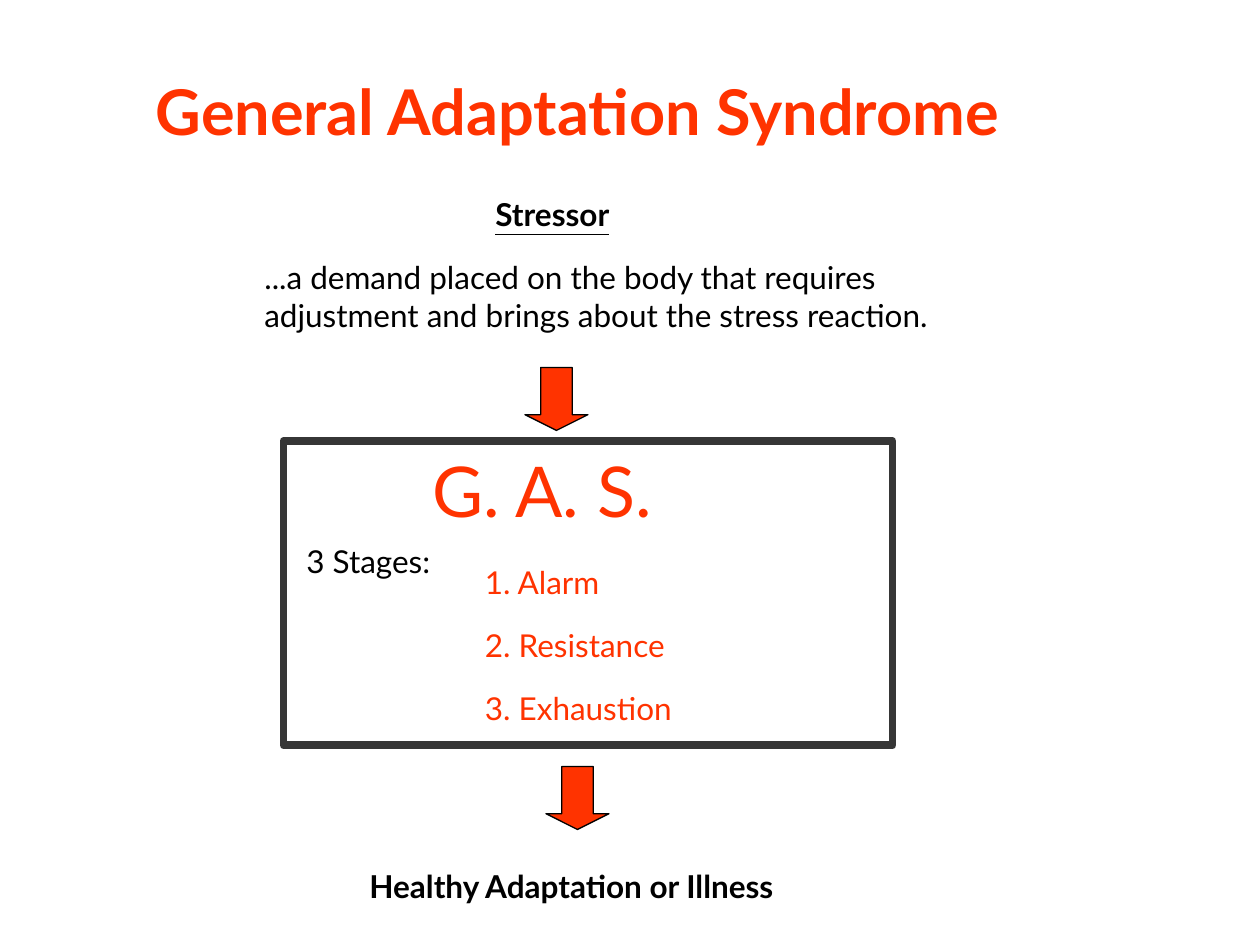
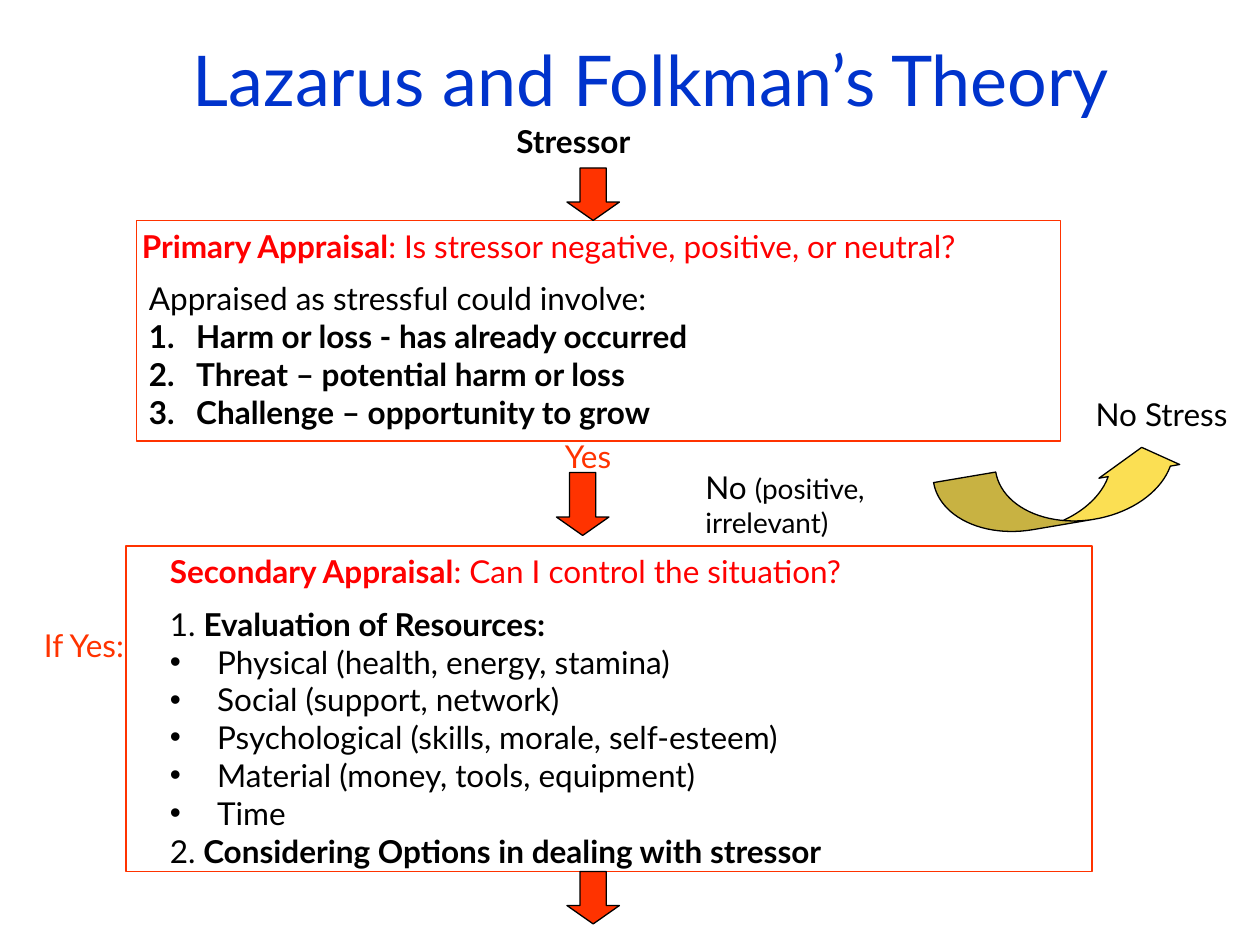
from lxml.etree import SubElement
from pptx import Presentation
from pptx.dml.color import RGBColor
from pptx.enum.shapes import MSO_SHAPE as Shape
from pptx.enum.text import MSO_ANCHOR as Anchor, PP_ALIGN as Align
from pptx.oxml.ns import qn
from pptx.util import Pt

FONT = "Lato"
COLORS = {"black": "000000", "orange": "FF3300", "red": "FF0000", "blue": "0033CC",
          "charcoal": "363636", "yellow": "FBDF53"}
BODY_SIZE = 18
TITLE_SIZE = (564, 90)
LINE_HEIGHT = 28.8
HANGING_INDENT = 27

# Content of slide 1
SYNDROME_TITLE = "General Adaptation Syndrome"
STRESSOR_MEANING = ("...a demand placed on the body that requires adjustment "
                    "and brings about the stress reaction.")
STAGES = ["1. Alarm", "2. Resistance", "3. Exhaustion"]

# Content of slide 2
THEORY_TITLE = "Lazarus and Folkman’s Theory"
PRIMARY = ("Primary Appraisal", ": Is stressor negative, positive, or neutral?")
STRESSFUL = "Appraised as stressful could involve:"
STRESSFUL_KINDS = ["Harm or loss - has already occurred",
                   "Threat – potential harm or loss",
                   "Challenge – opportunity to grow"]
SECONDARY = ("Secondary Appraisal", ": Can I control the situation?")
EVALUATION = ("1. ", "Evaluation of Resources:")
RESOURCES = ["Physical (health, energy, stamina)",
             "Social (support, network)",
             "Psychological (skills, morale, self-esteem)",
             "Material (money, tools, equipment)",
             "Time"]
OPTIONS = ("2.", " Considering Options in dealing with stressor")


def rgb(name):
    return RGBColor.from_string(COLORS[name])


def run(text, color="black", size=BODY_SIZE, bold=False, underline=False):
    return dict(text=text, color=color, size=size, bold=bold, underline=underline)


def add_marker(paragraph, marker):
    """Give a paragraph a hanging bullet or automatic number."""
    properties = paragraph._p.get_or_add_pPr()
    properties.set("marL", str(Pt(HANGING_INDENT)))
    properties.set("indent", str(-Pt(HANGING_INDENT)))
    if marker == "number":
        SubElement(properties, qn("a:buAutoNum"), type="arabicPeriod")
    else:
        SubElement(properties, qn("a:buFont"), typeface="Arial")
        SubElement(properties, qn("a:buChar"), char=marker)


def add_text(slide, left, top, width, height, *paragraphs,
             align=Align.LEFT, anchor=Anchor.TOP):
    """Each paragraph is a (marker, runs) pair."""
    box = slide.shapes.add_textbox(Pt(left), Pt(top), Pt(width), Pt(height))
    frame = box.text_frame
    frame.word_wrap = True
    frame.vertical_anchor = anchor
    for index, (marker, runs) in enumerate(paragraphs):
        paragraph = frame.add_paragraph() if index else frame.paragraphs[0]
        paragraph.alignment = align
        if marker:
            add_marker(paragraph, marker)
        for item in runs:
            text_run = paragraph.add_run()
            text_run.text = item["text"]
            font = text_run.font
            font.name, font.size = FONT, Pt(item["size"])
            font.bold, font.underline = item["bold"], item["underline"]
            font.color.rgb = rgb(item["color"])


def add_line(slide, left, top, width, *runs, align=Align.LEFT, height=LINE_HEIGHT):
    add_text(slide, left, top, width, height, (None, runs), align=align)


def add_title(slide, left, top, title):
    add_text(slide, left, top, *TITLE_SIZE, (None, [title]),
             align=Align.CENTER, anchor=Anchor.MIDDLE)


def add_figure(slide, kind, left, top, width, height, fill=None,
               line="black", weight=0.75, adjustments=()):
    shape = slide.shapes.add_shape(kind, Pt(left), Pt(top), Pt(width), Pt(height))
    shape.shadow.inherit = False
    for index, value in enumerate(adjustments):
        shape.adjustments[index] = value
    if fill:
        shape.fill.solid()
        shape.fill.fore_color.rgb = rgb(fill)
    else:
        shape.fill.background()
    shape.line.color.rgb = rgb(line)
    shape.line.width = Pt(weight)
    return shape


def add_down_arrow(slide, left, top, width, height, head):
    add_figure(slide, Shape.DOWN_ARROW, left, top, width, height, "orange",
               adjustments=(0.5, head))


def build_syndrome(slide):
    add_title(slide, 48, 18, run(SYNDROME_TITLE, "orange", 36, bold=True))
    add_line(slide, 276, 108, 144, run("Stressor", bold=True, underline=True))
    add_line(slide, 144, 144, 402, run(STRESSOR_MEANING), height=51)

    # Framed stages between two arrows
    add_down_arrow(slide, 300, 210, 36, 36, 0.25)
    add_figure(slide, Shape.RECTANGLE, 162, 252, 348, 174, line="charcoal", weight=4.5)
    add_line(slide, 240, 252, 210, run("G. A. S.", "orange", 40), height=55.5)
    add_line(slide, 168, 306, 174, run("3 Stages:"))
    for index, stage in enumerate(STAGES):
        add_line(slide, 270, 318 + 36 * index, 204, run(stage, "orange"))
    add_down_arrow(slide, 312, 438, 36, 36, 0.25)

    add_line(slide, 204, 492, 444, run("Healthy Adaptation or Illness", bold=True))


def build_theory(slide):
    add_title(slide, 90, 0, run(THEORY_TITLE, "blue", 40))
    add_line(slide, 288, 66, 90, run("Stressor", bold=True))

    # Frames and the arrows that join them
    for frame in [(78, 126, 528, 126), (72, 312, 552, 186)]:
        add_figure(slide, Shape.RECTANGLE, *frame, line="orange")
    for left, top, height in [(324, 96, 30), (318, 270, 36), (324, 498, 30)]:
        add_down_arrow(slide, left, top, 30, height, 0.35)

    # Primary appraisal
    heading, question = PRIMARY
    add_line(slide, 74, 126, 530, run(heading, "red", bold=True), run(question, "red"))
    add_text(slide, 78, 156, 528, 94.5, (None, [run(STRESSFUL)]),
             *[("number", [run(kind, bold=True)]) for kind in STRESSFUL_KINDS])

    # Outcomes
    add_line(slide, 306, 246, 60, run("Yes", "orange"), align=Align.CENTER)
    curve = add_figure(slide, Shape.CURVED_UP_ARROW, 535.5, 263.5, 144, 36, "yellow",
                       adjustments=(1.01, 1.3, 0.37))
    curve.rotation = 350.4
    add_line(slide, 396, 264, 127, run("No "), run("(positive, irrelevant)", size=16),
             height=48)
    add_line(slide, 619, 222, 101, run("No Stress"))
    add_line(slide, 15, 354, 66, run("If Yes:", "orange"), align=Align.CENTER)

    # Secondary appraisal
    heading, question = SECONDARY
    add_line(slide, 90, 312, 504, run(heading, "red", bold=True), run(question, "red"))
    numbered = [(None, [run(number), run(text, bold=True)])
                for number, text in (EVALUATION, OPTIONS)]
    bullets = [("•", [run(resource)]) for resource in RESOURCES]
    add_text(slide, 90, 342, 528, 181.5, numbered[0], *bullets, numbered[1])


def main():
    presentation = Presentation()
    presentation.slide_width, presentation.slide_height = Pt(720), Pt(540)
    for build in (build_syndrome, build_theory):
        build(presentation.slides.add_slide(presentation.slide_layouts[6]))
    presentation.save("out.pptx")


if __name__ == "__main__":
    main()
